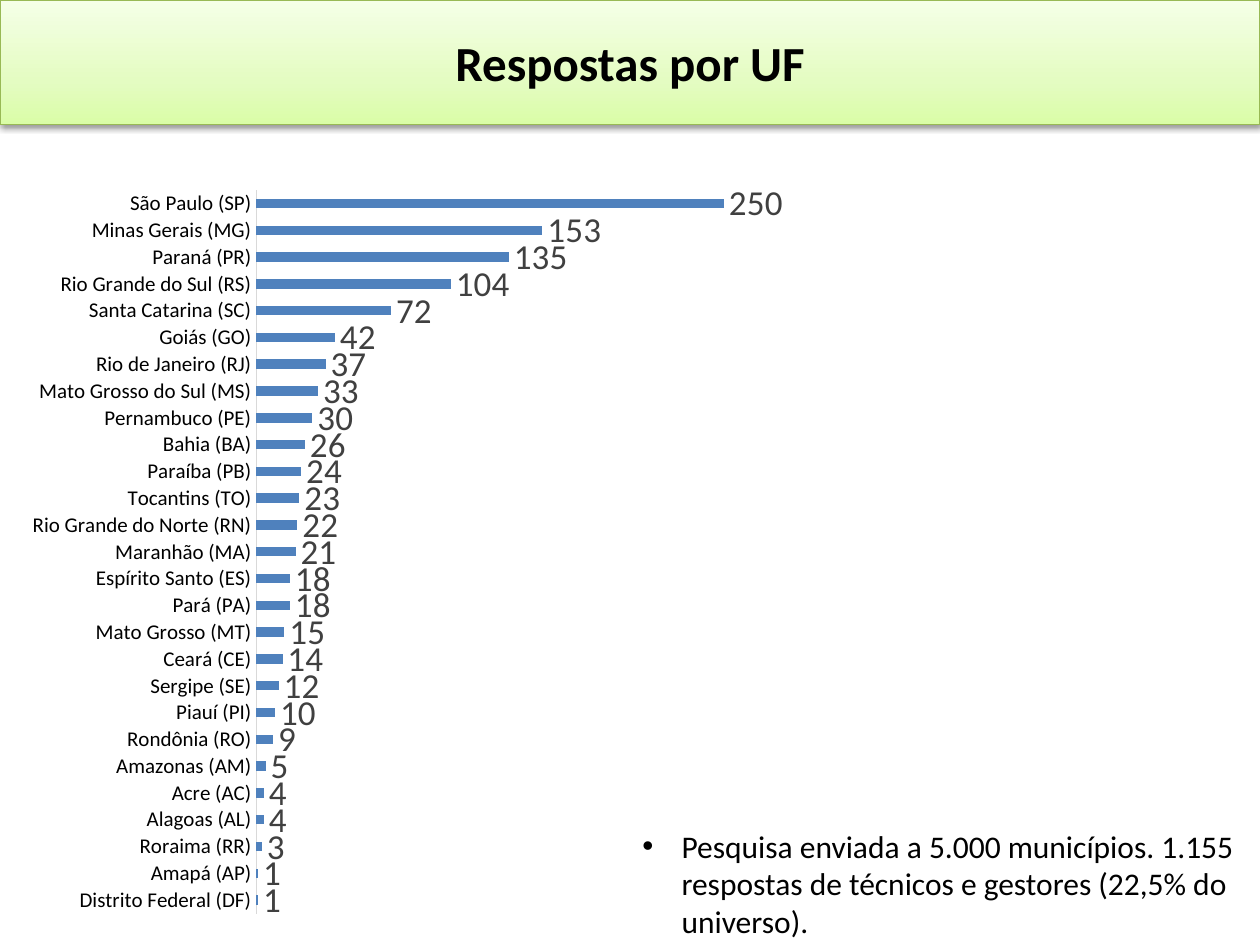
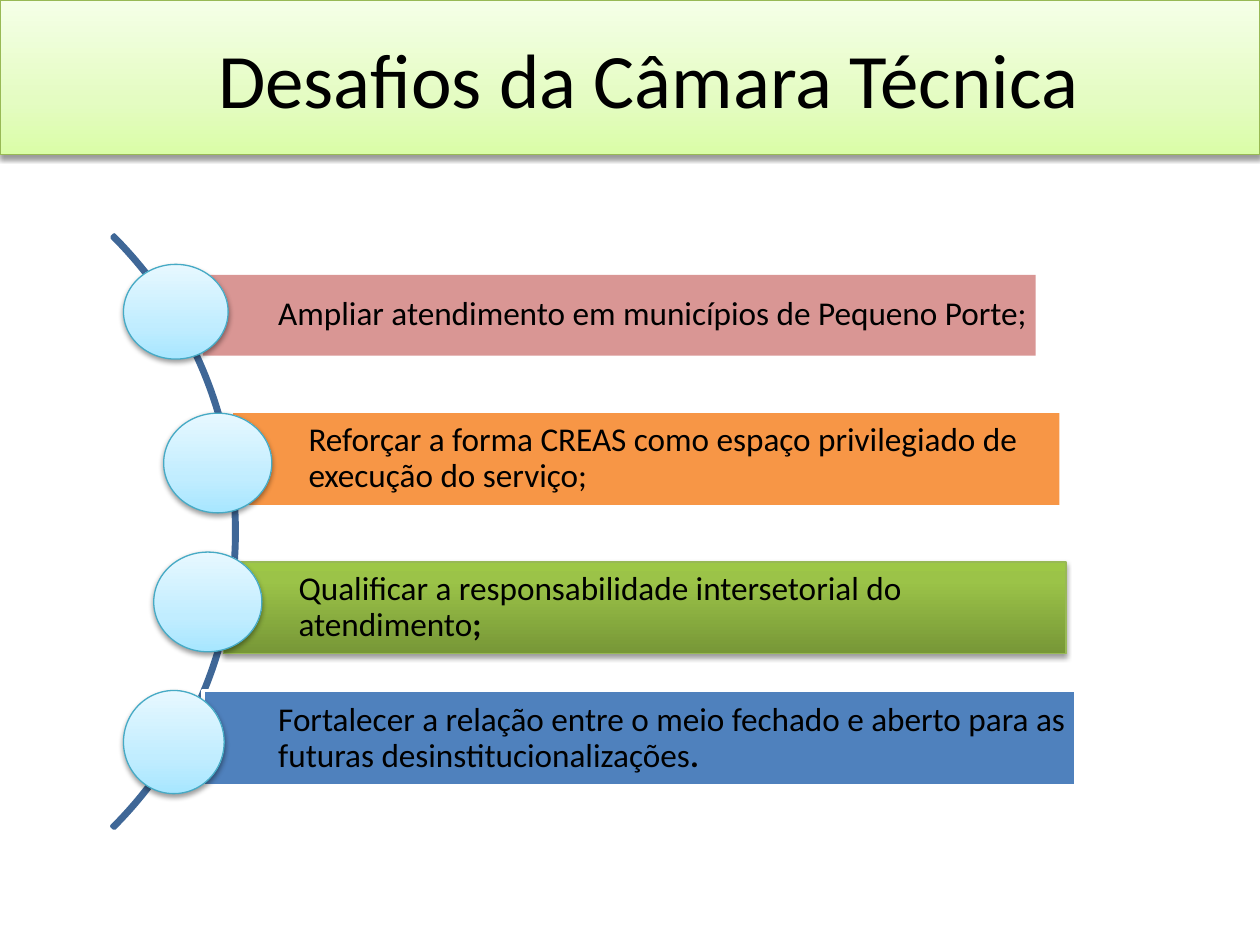
from lxml import etree
from pptx import Presentation
from pptx import util as u
from pptx.chart import data as chart_data
from pptx.dml.color import RGBColor
from pptx.enum import chart as charts, shapes, text
from pptx.oxml.ns import qn

Cm, Pt = u.Cm, u.Pt

BLACK, BLUE, OLIVE, TEAL = "000000", "4F81BD", "98B955", "46AAC5"
# Gradients run from bottom to top: (position in percent, colour)
LIME = [(0, "DAFDA7"), (35, "E4FCC2"), (100, "F5FFE7")]
SKY = [(0, "A7E6FF"), (35, "C1EDFF"), (100, "E7F8FF")]
GREEN = [(0, "779737"), (80, "9BC348"), (100, "9DC746")]

ANSWERS = {
    "Distrito Federal (DF)": 1, "Amapá (AP)": 1, "Roraima (RR)": 3,
    "Alagoas (AL)": 4, "Acre (AC)": 4, "Amazonas (AM)": 5,
    "Rondônia (RO)": 9, "Piauí (PI)": 10, "Sergipe (SE)": 12,
    "Ceará (CE)": 14, "Mato Grosso (MT)": 15, "Pará (PA)": 18,
    "Espírito Santo (ES)": 18, "Maranhão (MA)": 21,
    "Rio Grande do Norte (RN)": 22, "Tocantins (TO)": 23,
    "Paraíba (PB)": 24, "Bahia (BA)": 26, "Pernambuco (PE)": 30,
    "Mato Grosso do Sul (MS)": 33, "Rio de Janeiro (RJ)": 37,
    "Goiás (GO)": 42, "Santa Catarina (SC)": 72,
    "Rio Grande do Sul (RS)": 104, "Paraná (PR)": 135,
    "Minas Gerais (MG)": 153, "São Paulo (SP)": 250,
}

# Text, bold ending, bar box, bar style, circle box (boxes in cm)
CHALLENGES = [
    ("Ampliar atendimento em municípios de Pequeno Porte;", "",
     (4.09, 5.54, 16.79, 1.63), dict(fill="D99694"),
     (2.49, 5.33, 2.11, 1.91)),
    ("Reforçar a forma CREAS como espaço privilegiado de execução do serviço;", "",
     (4.7, 8.33, 16.66, 1.85), dict(fill="F79646"),
     (3.3, 8.33, 2.18, 2.01)),
    ("Qualificar a responsabilidade intersetorial do atendimento", ";",
     (4.5, 11.33, 16.99, 1.85), dict(fill=GREEN, line=OLIVE, shadow=True),
     (3.1, 11.13, 2.18, 2.01)),
    ("Fortalecer a relação entre o meio fechado e aberto para as futuras "
     "desinstitucionalizações", ".",
     (4.09, 13.92, 17.6, 1.93), dict(fill=BLUE, line="FFFFFF", width=2),
     (2.49, 13.92, 2.03, 2.08)),
]


def color(value):
    return RGBColor.from_string(value)


def add_xml(parent, tag, **attributes):
    element = etree.SubElement(parent, qn(tag))
    for name, value in attributes.items():
        element.set(name, str(value))
    return element


class Deck:
    """Holds the shared style and the current slide."""
    font = "Calibri"

    def __init__(self):
        self.presentation = Presentation()
        self.presentation.slide_width = Cm(25.4)
        self.presentation.slide_height = Cm(19.05)
        self.slide = None

    def new_slide(self):
        self.slide = self.presentation.slides.add_slide(
            self.presentation.slide_layouts[6])

    def style_font(self, font, size, shade=BLACK, bold=False):
        font.name, font.size, font.bold = self.font, Pt(size), bold
        font.color.rgb = color(shade)

    def paint(self, shape, fill):
        if fill is None:
            shape.fill.background()
        elif isinstance(fill, str):
            shape.fill.solid()
            shape.fill.fore_color.rgb = color(fill)
        else:
            shape.fill.gradient()
            shape.fill.gradient_angle = 90
            stops = next(shape._element.iter(qn("a:gsLst")))
            for stop in list(stops):
                stops.remove(stop)
            for position, shade in fill:
                stop = add_xml(stops, "a:gs", pos=position * 1000)
                add_xml(stop, "a:srgbClr", val=shade)

    def shape(self, kind, box, fill=None, line=None, width=0.75, shadow=False):
        shape = self.slide.shapes.add_shape(kind, *map(Cm, box))
        self.paint(shape, fill)
        if line:
            shape.line.color.rgb = color(line)
            shape.line.width = Pt(width)
        else:
            shape.line.fill.background()
        shape.shadow.inherit = False
        if shadow:
            effects = next(shape._element.iter(qn("a:effectLst")))
            outer = add_xml(effects, "a:outerShdw", blurRad=Pt(3.1), dist=Pt(1.6),
                            dir=5400000, rotWithShape=0)
            shade = add_xml(outer, "a:srgbClr", val=BLACK)
            add_xml(shade, "a:alpha", val=38000)
        return shape

    def put_text(self, shape, words, size, bold=False, align=text.PP_ALIGN.LEFT):
        frame = shape.text_frame
        frame.word_wrap = True
        frame.text = words
        paragraph = frame.paragraphs[0]
        paragraph.alignment = align
        self.style_font(paragraph.runs[0].font, size, bold=bold)
        return paragraph

    def title(self, words, height, size, bold=False,
              align=text.PP_ALIGN.CENTER, indent=0.25):
        band = self.shape(shapes.MSO_SHAPE.RECTANGLE, (0, 0, 25.4, height),
                          LIME, OLIVE, shadow=True)
        band.text_frame.vertical_anchor = text.MSO_ANCHOR.MIDDLE
        band.text_frame.margin_left = Cm(indent)
        self.put_text(band, words, size, bold, align)

    def bullet(self, words, box, size):
        textbox = self.slide.shapes.add_textbox(*map(Cm, box))
        paragraph = self.put_text(textbox, words, size)
        textbox.text_frame.auto_size = text.MSO_AUTO_SIZE.SHAPE_TO_FIT_TEXT
        properties = paragraph._p.get_or_add_pPr()
        properties.set("marL", str(Cm(0.79)))
        properties.set("indent", str(-Cm(0.79)))
        add_xml(properties, "a:buFont", typeface="Arial")
        add_xml(properties, "a:buChar", char="•")

    def bar_chart(self, values, box):
        data = chart_data.CategoryChartData()
        data.categories = list(values)
        data.add_series("Respostas", list(values.values()))
        chart = self.slide.shapes.add_chart(
            charts.XL_CHART_TYPE.BAR_CLUSTERED, *map(Cm, box), data).chart
        chart.has_legend = chart.has_title = False
        self.style_font(chart.font, 10)
        # Axes
        axis = chart.category_axis
        axis.major_tick_mark = charts.XL_TICK_MARK.NONE
        axis.format.line.color.rgb = color("D9D9D9")
        axis.format.line.width = Pt(0.75)
        self.style_font(axis.tick_labels.font, 12)
        chart.value_axis.visible = False
        chart.value_axis.has_major_gridlines = False
        chart.value_axis.minimum_scale = 0
        chart.value_axis.maximum_scale = 300
        # Bars and their labels
        plot = chart.plots[0]
        plot.gap_width, plot.vary_by_categories = 182, False
        self.paint(plot.series[0].format, BLUE)
        plot.has_data_labels = True
        labels = plot.data_labels
        labels.show_value = True
        labels.position = charts.XL_LABEL_POSITION.OUTSIDE_END
        self.style_font(labels.font, 20, "404040")

    def challenge(self, words, ending, bar_box, bar_style, circle_box):
        bar = self.shape(shapes.MSO_SHAPE.RECTANGLE, bar_box, **bar_style)
        frame = bar.text_frame
        frame.vertical_anchor = text.MSO_ANCHOR.MIDDLE
        frame.margin_left = Cm(1.52)
        frame.margin_right = frame.margin_top = frame.margin_bottom = Cm(0.12)
        paragraph = self.put_text(bar, words, 19)
        paragraph.line_spacing = 0.9
        if ending:
            run = paragraph.add_run()
            run.text = ending
            self.style_font(run.font, 19, bold=True)
        self.shape(shapes.MSO_SHAPE.OVAL, circle_box, SKY, TEAL, shadow=True)


def main():
    deck = Deck()

    # Answers by state
    deck.new_slide()
    deck.bar_chart(ANSWERS, (0.33, 3.53, 16.48, 15.19))
    deck.bullet("Pesquisa enviada a 5.000 municípios. 1.155 respostas de técnicos "
                "e gestores (22,5% do universo).", (12.7, 16.54, 12.7, 2.57), 18)
    deck.title("Respostas por UF", 2.51, 28, bold=True)

    # Challenges along an arc
    deck.new_slide()
    deck.title("Desafios da Câmara Técnica", 3.12, 44,
               align=text.PP_ALIGN.LEFT, indent=4.4)
    arc = deck.shape(shapes.MSO_SHAPE.BLOCK_ARC, (-12.14, 2.26, 16.92, 16.92),
                     line="3F6797", width=2)
    for index, value in enumerate((189, 27, 0.004)):
        arc.adjustments[index] = value
    for challenge in CHALLENGES:
        deck.challenge(*challenge)

    deck.presentation.save("out.pptx")


if __name__ == "__main__":
    main()
